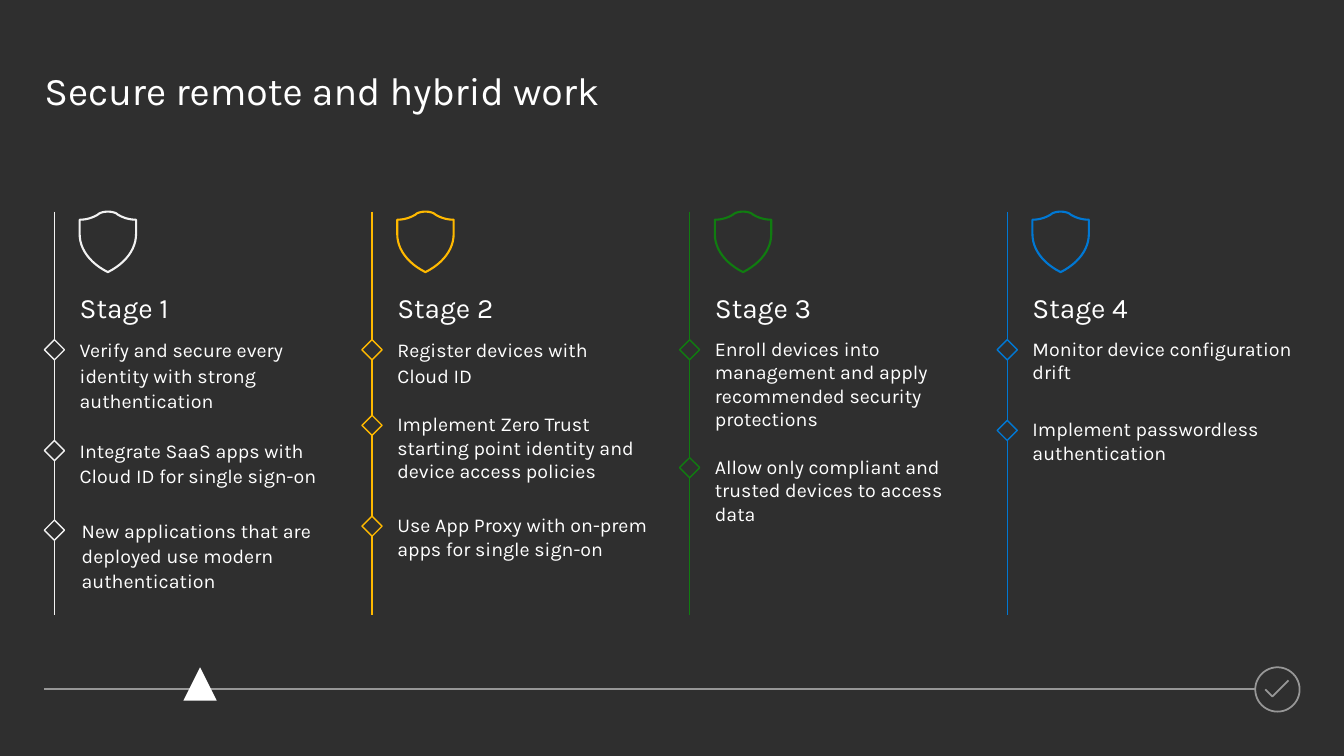
"""Builds a four-stage roadmap slide for secure remote and hybrid work."""
import pptx
import pptx.dml.color
import pptx.enum.shapes
import pptx.enum.text
import pptx.oxml.ns
import pptx.util
from pptx.util import Inches

RGBColor = pptx.dml.color.RGBColor
SHAPE = pptx.enum.shapes.MSO_SHAPE

BACKGROUND = RGBColor(0x2F, 0x2F, 0x2F)
WHITE = RGBColor(0xFF, 0xFF, 0xFF)
PALE = RGBColor(0xF2, 0xF2, 0xF2)
YELLOW = RGBColor(0xFF, 0xB9, 0x00)
GREEN = RGBColor(0x10, 0x7C, 0x10)
BLUE = RGBColor(0x00, 0x78, 0xD4)
GREY = RGBColor(0x97, 0x97, 0x97)

MARGIN = 0.44
RULE_LEFT = 0.54
TEXT_OFFSET = 0.25
COLUMN_PITCH = 3.15
COLUMN_TOP = 2.1
COLUMN_BOTTOM = 6.1
DIAMOND = 0.2
TIMELINE = 6.84
BADGE = 0.44
BADGE_LEFT = 12.45

LOOSE = 1.07
TIGHT = None

STAGES = [
    (PALE, [
        (3.34, 0, LOOSE, "Verify and secure every identity with strong authentication"),
        (4.34, 0, LOOSE, "Integrate SaaS apps with Cloud ID for single sign-on"),
        (5.13, 0.02, LOOSE, "New applications that are deployed use modern authentication"),
    ]),
    (YELLOW, [
        (3.34, 0, LOOSE, "Register devices with \nCloud ID"),
        (4.09, 0, TIGHT, "Implement Zero Trust starting point identity and device access policies"),
        (5.09, 0, TIGHT, "Use App Proxy with on-prem apps for single sign-on"),
    ]),
    (GREEN, [
        (3.34, 0, TIGHT, "Enroll devices into management and apply recommended security protections"),
        (4.51, 0, TIGHT, "Allow only compliant and trusted devices to access data"),
    ]),
    (BLUE, [
        (3.34, 0, TIGHT, "Monitor device configuration drift"),
        (4.14, 0, TIGHT, "Implement passwordless authentication"),
    ]),
]

SHIELD_WIDTH = 0.56
SHIELD_CURVES = [
    [(0.28, 0), (0.32, 0), (0.36, 0.01), (0.38, 0.03)],
    [(0.38, 0.03), (0.43, 0.06), (0.49, 0.08), (0.56, 0.08)],
    [(0.56, 0.22), (0.56, 0.37), (0.46, 0.51), (0.28, 0.6)],
]


def curve_points(controls, steps=12):
    """Return points along a cubic curve."""
    points = []
    for step in range(steps + 1):
        t = step / steps
        weights = ((1 - t) ** 3, 3 * t * (1 - t) ** 2, 3 * t * t * (1 - t), t ** 3)
        points.append(tuple(
            sum(weight * control[axis] for weight, control in zip(weights, controls))
            for axis in (0, 1)))
    return points


def shield_points():
    """Return the shield outline, its left half mirrored from the right."""
    right = [point for curve in SHIELD_CURVES for point in curve_points(curve)]
    left = [(SHIELD_WIDTH - x, y) for x, y in reversed(right)]
    return right + left[1:-1]


class RoadmapSlide:
    """Holds the style and the current slide."""

    font = "Karla"

    def __init__(self, presentation):
        """Add a title-only slide with a dark background."""
        self.slide = presentation.slides.add_slide(presentation.slide_layouts[5])
        self.slide.background.fill.solid()
        self.slide.background.fill.fore_color.rgb = BACKGROUND

    def fill_text(self, shape, content, size, spacing=TIGHT):
        """Fill a text shape with one styled paragraph."""
        frame = shape.text_frame
        frame.word_wrap = True
        frame.auto_size = pptx.enum.text.MSO_AUTO_SIZE.NONE
        frame.vertical_anchor = pptx.enum.text.MSO_ANCHOR.TOP
        frame.margin_left = frame.margin_right = 0
        frame.margin_top = frame.margin_bottom = 0
        paragraph = frame.paragraphs[0]
        paragraph.alignment = pptx.enum.text.PP_ALIGN.LEFT
        if spacing:
            paragraph.line_spacing = spacing
            paragraph.space_before = pptx.util.Pt(4)
            paragraph.space_after = pptx.util.Pt(5)
        for index, line in enumerate(content.split("\n")):
            if index:
                paragraph.add_line_break()
            run = paragraph.add_run()
            run.text = line
            run.font.name = self.font
            run.font.size = pptx.util.Pt(size)
            run.font.color.rgb = WHITE

    def title(self, content):
        """Place and fill the title."""
        title = self.slide.shapes.title
        title.left, title.top = Inches(MARGIN), Inches(0.66)
        title.width, title.height = Inches(6.42), Inches(0.47)
        self.fill_text(title, content, 28)

    def text(self, left, top, height, content, size, spacing):
        """Add a text box."""
        box = self.slide.shapes.add_textbox(
            Inches(left), Inches(top), Inches(2.65), Inches(height))
        self.fill_text(box, content, size, spacing)

    def paint(self, shape, fill, line=None, width=1):
        """Set fill and outline; None leaves that part empty."""
        shape.shadow.inherit = False
        if fill is None:
            shape.fill.background()
        else:
            shape.fill.solid()
            shape.fill.fore_color.rgb = fill
        if line is None:
            shape.line.fill.background()
        else:
            shape.line.color.rgb = line
            shape.line.width = pptx.util.Pt(width)

    def preset(self, kind, left, top, size, fill, line=None, width=1):
        """Add a preset shape of equal width and height."""
        shape = self.slide.shapes.add_shape(
            kind, Inches(left), Inches(top), Inches(size), Inches(size))
        self.paint(shape, fill, line, width)

    def outline(self, left, top, points, closed, fill, line, width):
        """Add a freeform from points relative to its corner."""
        corners = [(Inches(left + x), Inches(top + y)) for x, y in points]
        builder = self.slide.shapes.build_freeform(*corners[0])
        builder.add_line_segments(corners[1:], close=closed)
        self.paint(builder.convert_to_shape(), fill, line, width)

    def rule(self, start, end, color, width):
        """Add a straight line."""
        connector = self.slide.shapes.add_connector(
            pptx.enum.shapes.MSO_CONNECTOR.STRAIGHT,
            *(Inches(value) for value in start + end))
        connector.line.color.rgb = color
        connector.line.width = pptx.util.Pt(width)
        properties = connector._element.spPr
        properties.append(properties.makeelement(pptx.oxml.ns.qn("a:effectLst"), {}))

    def stage(self, number, color, steps):
        """Add one stage column with its shield and steps."""
        rule_left = RULE_LEFT + (number - 1) * COLUMN_PITCH
        text_left = rule_left + TEXT_OFFSET
        self.rule((rule_left, COLUMN_TOP), (rule_left, COLUMN_BOTTOM), color, 1)
        self.outline(text_left, COLUMN_TOP, shield_points(), True, BACKGROUND, color, 1.5)
        self.text(text_left, 2.86, 0.33, f"Stage {number}", 20, LOOSE)
        for top, indent, spacing, content in steps:
            self.preset(SHAPE.DIAMOND, rule_left - DIAMOND / 2, top + 0.03,
                        DIAMOND, BACKGROUND, color)
            self.text(text_left + indent, top, 0.74, content, 14, spacing)

    def timeline(self):
        """Add the progress line, its marker and the finish badge."""
        self.rule((MARGIN, TIMELINE), (BADGE_LEFT, TIMELINE), GREY, 1.5)
        self.preset(SHAPE.OVAL, BADGE_LEFT, TIMELINE - BADGE / 2, BADGE,
                    BACKGROUND, GREY, 1.25)
        self.outline(BADGE_LEFT, TIMELINE, [(0.1, 0), (0.17, 0.07), (0.33, -0.09)],
                     False, None, GREY, 1.25)
        self.preset(SHAPE.ISOSCELES_TRIANGLE, 1.82, 6.62, 0.33, WHITE)


def main():
    """Build and save the presentation."""
    presentation = pptx.Presentation()
    presentation.slide_width = Inches(13.33)
    presentation.slide_height = Inches(7.5)
    roadmap = RoadmapSlide(presentation)
    roadmap.title("Secure remote and hybrid work")
    for number, (color, steps) in enumerate(STAGES, start=1):
        roadmap.stage(number, color, steps)
    roadmap.timeline()
    presentation.save("out.pptx")


if __name__ == "__main__":
    main()
